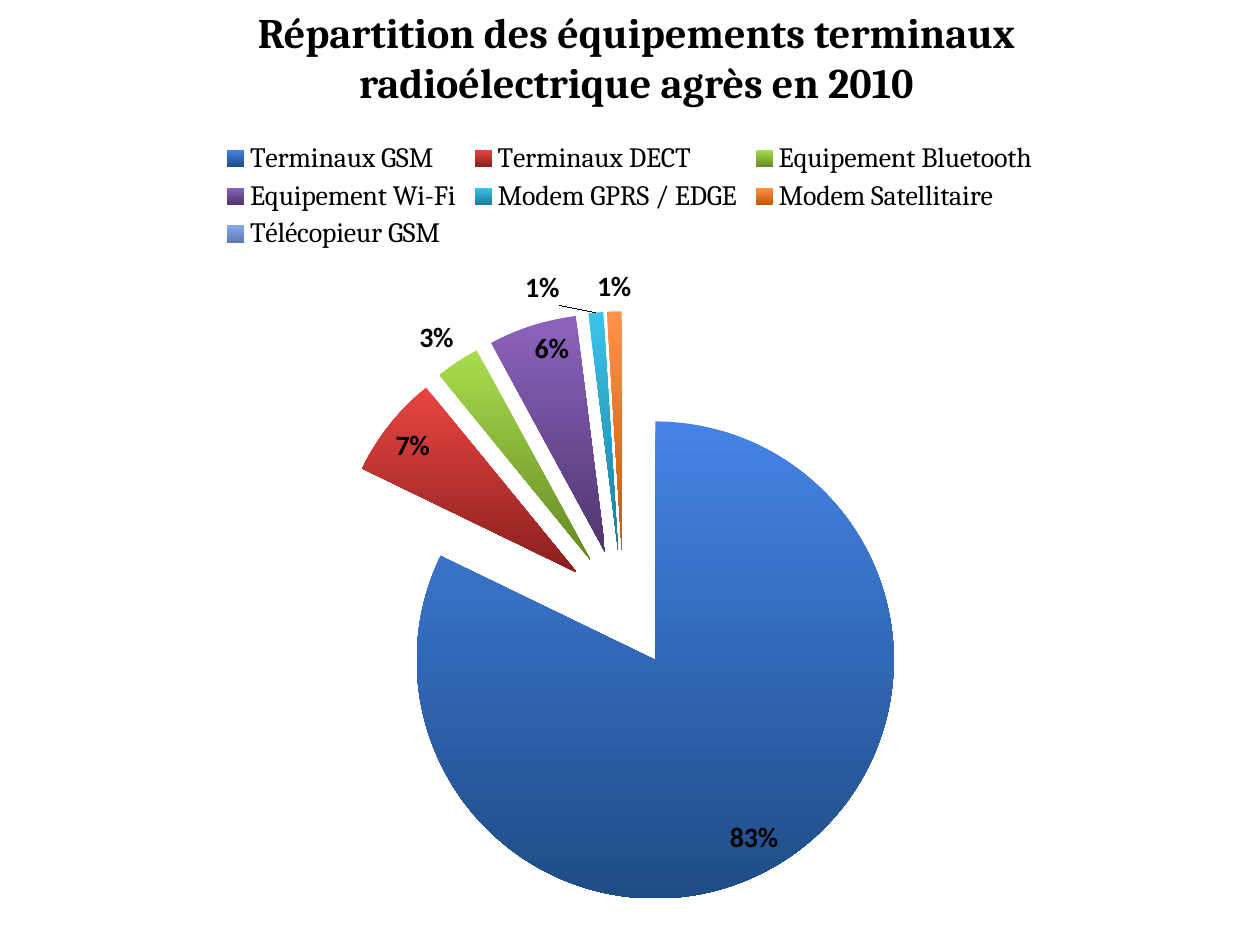
from dataclasses import dataclass

from lxml.etree import SubElement
from pptx import Presentation
from pptx.chart.data import CategoryChartData
from pptx.dml.color import RGBColor
from pptx.enum.chart import XL_CHART_TYPE, XL_LABEL_POSITION, XL_LEGEND_POSITION
from pptx.enum.text import MSO_ANCHOR, PP_ALIGN
from pptx.oxml import parse_xml
from pptx.oxml.ns import nsdecls, qn
from pptx.util import Inches, Pt


@dataclass(frozen=True)
class Theme:
    head: str = "Cambria"
    body: str = "Calibri"
    ink: str = "000000"
    title: int = 24
    label: int = 16
    base: int = 10


THEME = Theme()
IN, OUT = XL_LABEL_POSITION.INSIDE_END, XL_LABEL_POSITION.OUTSIDE_END

# Category, percentage, gradient top and bottom, label place, label shift
SLICES = [
    ("Terminaux GSM", 83, "4583E6", "1E4C86", IN, 0),
    ("Terminaux DECT", 7, "E84543", "8A1F1D", IN, 0),
    ("Equipement Bluetooth", 3, "A8DD4E", "668A25", OUT, 0),
    ("Equipement Wi-Fi", 6, "8C63BE", "50366F", IN, 0),
    ("Modem GPRS / EDGE", 1, "3CC3EA", "1B7F9B", OUT, -0.03),
    ("Modem Satellitaire", 1, "FF924A", "C45A08", OUT, 0),
    ("Télécopieur GSM", 0, "82A9EE", "5F7DB0", OUT, 0.04),
]


def style(font, size, face, bold=False):
    font.size, font.name, font.bold = Pt(size), face, bold
    font.color.rgb = RGBColor.from_string(THEME.ink)


def layout(x, y, w=None, h=None, inner=False):
    """Manual chart layout in shares of the chart; a shift if no size is given."""
    node = parse_xml(f"<c:layout {nsdecls('c')}><c:manualLayout/></c:layout>")
    parts = [("layoutTarget", "inner")] if inner else []
    if w is not None:
        parts += [("xMode", "edge"), ("yMode", "edge")]
    parts += [("x", x), ("y", y)]
    if w is not None:
        parts += [("w", w), ("h", h)]
    for tag, val in parts:
        SubElement(node[0], qn(f"c:{tag}")).set("val", str(val))
    return node


def put_title(slide, box):
    title = slide.shapes.title
    title.left, title.top, title.width, title.height = box
    frame = title.text_frame
    frame.text = "Répartition des équipements terminaux radioélectrique agrès en 2010"
    frame.word_wrap = True
    frame.vertical_anchor = MSO_ANCHOR.TOP
    line = frame.paragraphs[0]
    line.alignment = PP_ALIGN.CENTER
    style(line.runs[0].font, THEME.title, THEME.head, True)


def put_pie(slide, box):
    data = CategoryChartData(number_format='0"%"')
    data.categories = [row[0] for row in SLICES]
    data.add_series("Series 1", [row[1] for row in SLICES])
    chart = slide.shapes.add_chart(XL_CHART_TYPE.PIE, *box, data).chart
    chart.has_title = False
    style(chart.font, THEME.base, THEME.body)

    # Legend above the pie
    chart.has_legend = True
    legend = chart.legend
    legend.position = XL_LEGEND_POSITION.TOP
    legend.include_in_layout = False
    style(legend.font, THEME.label, THEME.head)
    legend._element.find(qn("c:legendPos")).addnext(layout(0.16, 0.01, 0.69, 0.15))

    # Pie area, with room for the pulled-out slices
    area = chart._chartSpace.chart.plotArea
    for old in area.findall(qn("c:layout")):
        area.remove(old)
    area.insert(0, layout(0.25, 0.23, 0.5, 0.75, inner=True))

    # Slices and their labels
    plot = chart.plots[0]
    plot.vary_by_categories = True
    pie = plot.series[0]
    style(pie.data_labels.font, THEME.label, THEME.body, True)
    pie.data_labels.show_value = True
    for i, (_, _, top, low, place, shift) in enumerate(SLICES):
        point = pie.points[i]
        fill = point.format.fill
        fill.gradient()
        fill.gradient_angle = 270
        for stop, tone in zip(fill.gradient_stops, (top, low)):
            stop.color.rgb = RGBColor.from_string(tone)
        label = point.data_label
        style(label.font, THEME.label, THEME.body, True)
        label.position = place
        if shift:
            node = pie.data_labels._element.findall(qn("c:dLbl"))[i]
            node.find(qn("c:idx")).addnext(layout(shift, 0))

    # Pull every slice out by a quarter of the radius
    burst = parse_xml(f'<c:explosion {nsdecls("c")} val="25"/>')
    pie._element.find(qn("c:dPt")).addprevious(burst)


def main():
    deck = Presentation()
    deck.slide_width, deck.slide_height = Inches(10), Inches(7.5)
    slide = deck.slides.add_slide(deck.slide_layouts[5])
    put_pie(slide, [Inches(n) for n in (0.21, 1.02, 9.48, 6.31)])
    put_title(slide, [Inches(n) for n in (1.86, 0, 6.38, 0.91)])
    deck.save("out.pptx")


if __name__ == "__main__":
    main()
